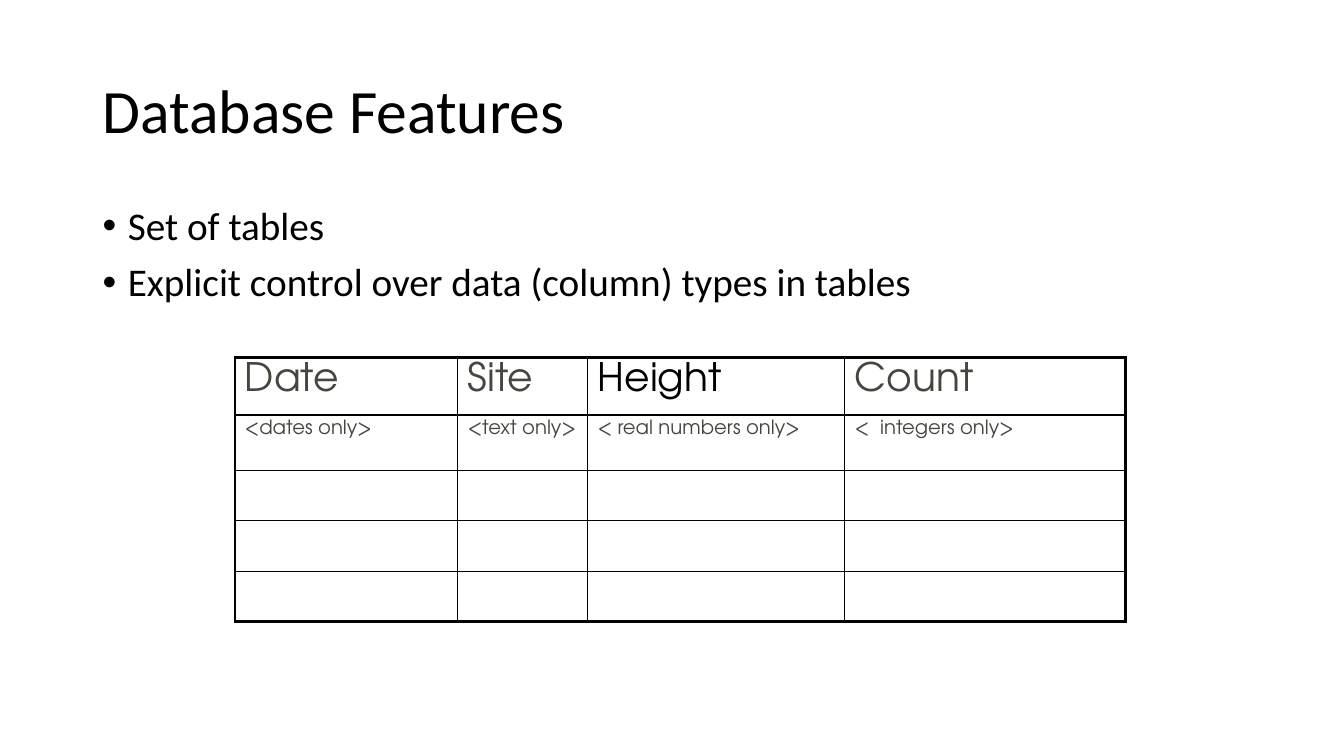
from pptx import Presentation
from pptx.dml.color import RGBColor
from pptx.enum.text import MSO_ANCHOR
from pptx.oxml import parse_xml
from pptx.oxml.ns import nsdecls
from pptx.util import Inches, Pt

COLORS = {"text": "000000", "table_text": "44473D", "border": "000000"}
BODY_FONT = "Calibri"
TABLE_FONT = "TeX Gyre Adventor"

BULLETS = ["Set of tables", "Explicit control over data (column) types in tables"]
COL_WIDTHS = [2.21, 1.29, 2.55, 2.78]
ROW_HEIGHTS = [0.5, 0.55, 0.5, 0.5, 0.5]
HEADERS = ["Date", "Site", "Height", "Count"]
TYPES = ["<dates only>", "<text only>", "< real numbers only>", "<  integers only>"]
THICK, THIN = 2.25, 1


def set_font(p, name, size, color):
    p.font.name = name
    p.font.size = Pt(size)
    p.font.color.rgb = RGBColor.from_string(COLORS[color])


def add_text(slide, left, top, width, height, lines, size, anchor=MSO_ANCHOR.TOP):
    """Add a wrapped text box with one paragraph per line and return the paragraphs."""
    box = slide.shapes.add_textbox(*map(Inches, (left, top, width, height)))
    tf = box.text_frame
    tf.word_wrap = True
    tf.vertical_anchor = anchor
    tf.text = "\n".join(lines)
    for p in tf.paragraphs:
        p.line_spacing = 0.9
        set_font(p, BODY_FONT, size, "text")
    return tf.paragraphs


def make_bullet(p):
    p.space_before = Pt(10)
    pPr = p._p.get_or_add_pPr()
    pPr.set("marL", str(Inches(0.25)))
    pPr.set("indent", str(-Inches(0.25)))
    for xml in ('<a:buFont {} typeface="Arial"/>', '<a:buChar {} char="•"/>'):
        pPr.insert_element_before(parse_xml(xml.format(nsdecls("a"))), "a:tabLst", "a:defRPr")


def set_borders(cell, widths):
    """Draw the cell's left, right, top and bottom lines, widths in points."""
    tcPr = cell._tc.get_or_add_tcPr()
    for side, width in zip("LRTB", widths):
        tcPr.append(parse_xml(
            f'<a:ln{side} {nsdecls("a")} w="{Pt(width)}"><a:solidFill>'
            f'<a:srgbClr val="{COLORS["border"]}"/></a:solidFill></a:ln{side}>'))


def add_type_table(slide, left, top):
    n_rows, n_cols = len(ROW_HEIGHTS), len(COL_WIDTHS)
    frame = slide.shapes.add_table(
        n_rows, n_cols, Inches(left), Inches(top),
        Inches(sum(COL_WIDTHS)), Inches(sum(ROW_HEIGHTS)))
    table = frame.table
    table.first_row = table.horz_banding = False
    for column, width in zip(table.columns, COL_WIDTHS):
        column.width = Inches(width)
    for row, height in zip(table.rows, ROW_HEIGHTS):
        row.height = Inches(height)

    for r in range(n_rows):
        for c in range(n_cols):
            cell = table.cell(r, c)
            outer = (c == 0, c == n_cols - 1, r == 0, r == n_rows - 1)
            set_borders(cell, [THICK if edge else THIN for edge in outer])
            cell.fill.background()

    for r, (texts, size) in enumerate([(HEADERS, 28), (TYPES, 14)]):
        for c, text in enumerate(texts):
            cell = table.cell(r, c)
            cell.text = text
            color = "text" if text == "Height" else "table_text"
            set_font(cell.text_frame.paragraphs[0], TABLE_FONT, size, color)


def main():
    prs = Presentation()
    prs.slide_width, prs.slide_height = Inches(13.33), Inches(7.5)
    slide = prs.slides.add_slide(prs.slide_layouts[6])
    add_text(slide, 0.92, 0.4, 11.5, 1.45, ["Database Features"], 44, MSO_ANCHOR.MIDDLE)
    for p in add_text(slide, 0.92, 2, 11.5, 4.76, BULLETS, 28):
        make_bullet(p)
    add_type_table(slide, 2.33, 3.55)
    prs.save("out.pptx")


if __name__ == "__main__":
    main()
